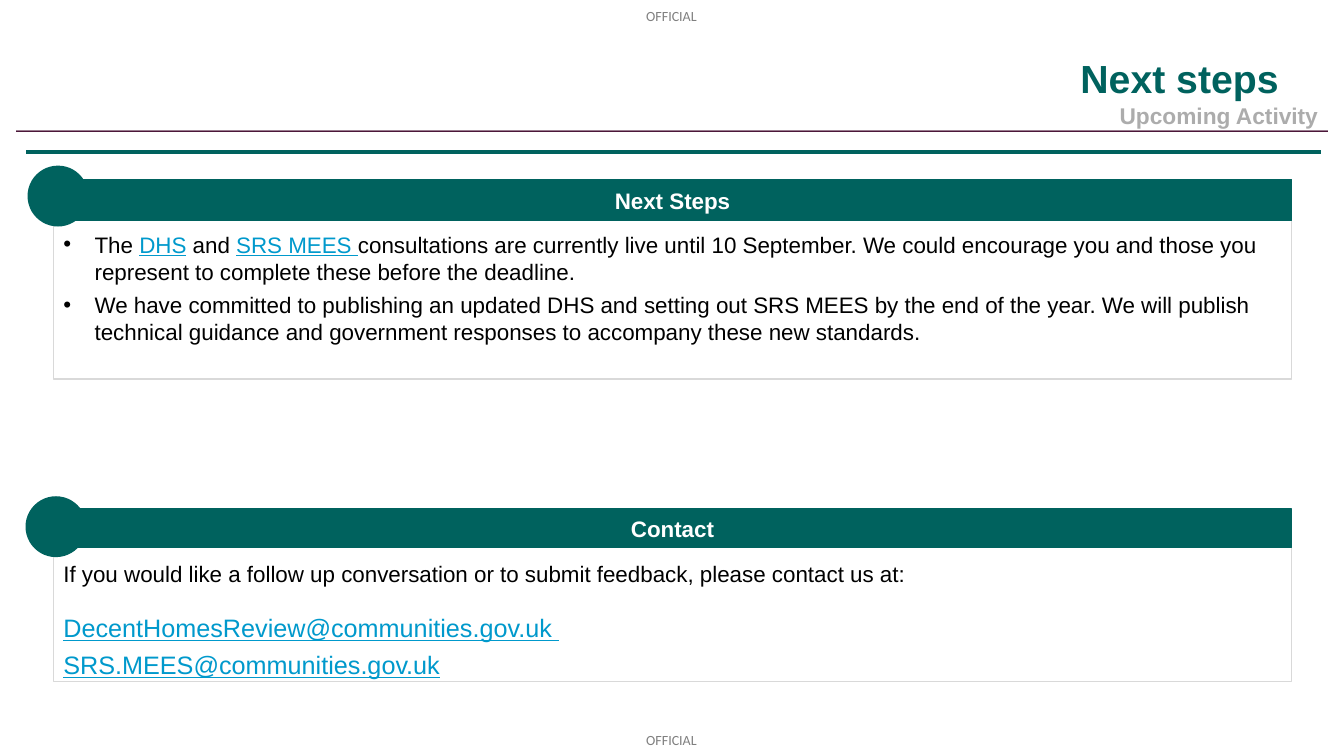
from lxml import etree
from pptx import Presentation
from pptx import util as u
from pptx.dml.color import RGBColor
from pptx.enum import shapes, text
from pptx.oxml.ns import qn

GREEN, GREY, LINK = "00625E", "ACACAC", "0099CC"
EDGE, BLACK, WHITE = "D9D9D9", "000000", "FFFFFF"
MARK = "OFFICIAL"
TITLE = "Next steps"
SUB = "Upcoming Activity"
LEFT, WIDE, DOT = 0.53, 12.28, 0.59

PANELS = [
    dict(head="Next Steps", top=1.78, tall=1.98, bar=0.41, dot=(0.28, 1.65), paras=[
        dict(size=16, gap=0, bullet=True, runs=[
            ("The ", False), ("DHS", True), (" and ", False), ("SRS MEES ", True),
            ("consultations are currently live until 10 September. We could encourage "
             "you and those you represent to complete these before the deadline.", False)]),
        dict(size=16, gap=5, bullet=True, runs=[
            ("We have committed to publishing an updated DHS and setting out SRS MEES "
             "by the end of the year. We will publish technical guidance and government "
             "responses to accompany these new standards.", False)]),
    ]),
    dict(head="Contact", top=5.05, tall=1.71, bar=0.38, dot=(0.26, 4.93), paras=[
        dict(size=16, gap=0, bullet=False, runs=[
            ("If you would like a follow up conversation or to submit feedback, "
             "please contact us at:", False)]),
        dict(size=18, gap=18, bullet=False, runs=[
            ("DecentHomesReview@communities.gov.uk ", True)]),
        dict(size=18, gap=5, bullet=False, runs=[
            ("SRS.MEES@communities.gov.uk", True)]),
    ]),
]


def paint(part, hue):
    part.rgb = RGBColor.from_string(hue)


def style(para, size, hue, bold=False, face="Arial"):
    font = para.font
    font.size, font.bold, font.name = u.Pt(size), bold, face
    paint(font.color, hue)


def shape(kind, left, top, wide, tall, fill=None, line=None):
    item = slide.shapes.add_shape(kind, *map(u.Inches, (left, top, wide, tall)))
    item.shadow.inherit = False
    if fill:
        item.fill.solid()
        paint(item.fill.fore_color, fill)
    else:
        item.fill.background()
    if line:
        paint(item.line.color, line)
        item.line.width = u.Pt(1)
    else:
        item.line.fill.background()
    return item


def label(item, words, size, hue, side, anchor=text.MSO_ANCHOR.MIDDLE):
    frame = item.text_frame
    frame.word_wrap = True
    frame.vertical_anchor = anchor
    para = frame.paragraphs[0]
    para.text, para.alignment = words, side
    style(para, size, hue, True)
    return para


def body(frame, paras):
    frame.word_wrap = True
    frame.vertical_anchor = text.MSO_ANCHOR.TOP
    frame.margin_top = u.Inches(0.51)
    for i, data in enumerate(paras):
        para = frame.paragraphs[0] if i == 0 else frame.add_paragraph()
        para.alignment = text.PP_ALIGN.LEFT
        para.space_before = u.Pt(data["gap"])
        if data["bullet"]:
            props = para._p.get_or_add_pPr()
            props.set("marL", str(u.Inches(0.31)))
            props.set("indent", str(u.Inches(-0.31)))
            etree.SubElement(props, qn("a:buFont")).set("typeface", "Arial")
            etree.SubElement(props, qn("a:buChar")).set("char", "•")
        style(para, data["size"], BLACK)
        for words, link in data["runs"]:
            run = para.add_run()
            run.text = words
            if link:
                run.font.underline = True
                paint(run.font.color, LINK)


def panel(data):
    top, kinds = data["top"], shapes.MSO_SHAPE
    box = shape(kinds.RECTANGLE, LEFT, top, WIDE, data["tall"], line=EDGE)
    body(box.text_frame, data["paras"])
    bar = shape(kinds.RECTANGLE, LEFT, top, WIDE, data["bar"], GREEN, GREEN)
    label(bar, data["head"], 16, WHITE, text.PP_ALIGN.CENTER)
    shape(kinds.OVAL, *data["dot"], DOT, DOT, GREEN, GREEN)


def mark(top):
    box = slide.shapes.add_textbox(*map(u.Inches, (6.41, top, 0.53, 0.17)))
    frame = box.text_frame
    frame.margin_left = frame.margin_right = frame.margin_top = frame.margin_bottom = 0
    frame.word_wrap = False
    frame.paragraphs[0].text = MARK
    style(frame.paragraphs[0], 10, "7F7F7F", face="Calibri")


def header():
    box = slide.shapes.add_textbox(*map(u.Inches, (6.22, 0.18, 6.88, 0.88)))
    para = label(box, TITLE, 28, GREEN, text.PP_ALIGN.RIGHT, text.MSO_ANCHOR.BOTTOM)
    para.line_spacing = 0.9
    box.text_frame.margin_right = u.Inches(0.42)
    band = shape(shapes.MSO_SHAPE.RECTANGLE, 0.16, 1.02, 13.01, 0.28)
    band.fill.gradient()
    band.fill.gradient_angle = 270
    for stop, (spot, hue) in zip(band.fill.gradient_stops, [(0.96, WHITE), (1, "4A1538")]):
        stop.position = spot
        paint(stop.color, hue)
    label(band, SUB, 16.2, GREY, text.PP_ALIGN.RIGHT).line_spacing = 0.9


def rule():
    line = slide.shapes.add_connector(
        shapes.MSO_CONNECTOR.STRAIGHT, *map(u.Inches, (0.26, 1.51, 13.1, 1.51)))
    paint(line.line.color, GREEN)
    line.line.width = u.Pt(3.25)
    etree.SubElement(line._element.spPr, qn("a:effectLst"))


deck = Presentation()
deck.slide_width, deck.slide_height = u.Inches(13.33), u.Inches(7.5)
slide = deck.slides.add_slide(deck.slide_layouts[6])
for top in (0.07, 7.26):
    mark(top)
header()
for data in PANELS:
    panel(data)
rule()
deck.save("out.pptx")
